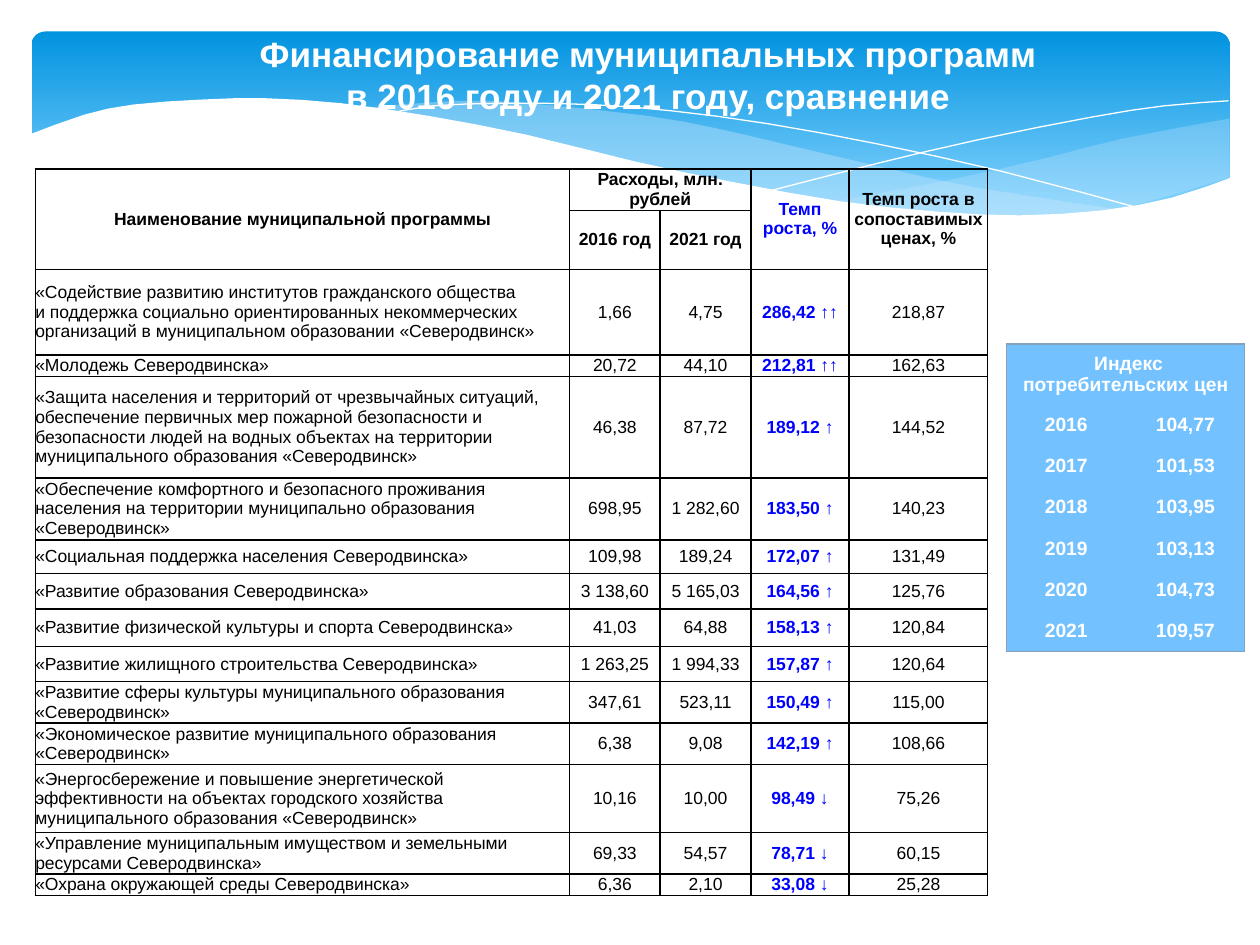
from dataclasses import dataclass

from lxml.etree import SubElement
from pptx import Presentation
from pptx.dml.color import RGBColor as Rgb
from pptx.enum.shapes import MSO_SHAPE as Preset
from pptx.enum.text import MSO_ANCHOR as Anchor, PP_ALIGN as Align
from pptx.oxml.ns import qn
from pptx.util import Inches, Pt

COLUMNS, ROWS = 100, 75
WIDTH, HEIGHT = Inches(10), Inches(7.5)
NO_STYLE = "{2D5ABB26-0587-4C30-8999-92F81FD0307C}"


@dataclass(frozen=True)
class Theme:
    font: str = "Arial"
    title_size: float = 20
    table_size: float = 10
    index_size: float = 11
    white: str = "FFFFFF"
    black: str = "000000"
    accent: str = "0000FF"
    sky: str = "0293E0"
    pale_sky: str = "83D3FE"
    wave: str = "C6E7FC"
    index_fill: str = "73C2FF"
    index_line: str = "88A1BB"


@dataclass(frozen=True)
class Box:
    """A region in grid columns and rows."""
    left: float
    top: float
    width: float
    height: float

    def place(self):
        return x(self.left), y(self.top), x(self.width), y(self.height)


THEME = Theme()

# Wave knots are grid offsets from the banner's top left corner.
RIGHT_WAVE = [
    [(95.1, 6.9), (86.6, 8.5), (80.7, 10), (72.8, 11.8), (63.6, 13.5)],
    [(63.6, 13.5), (72, 14.4), (76.7, 14.7), (81.9, 14.6), (86.4, 14.1), (95.1, 11.6)],
]
MIDDLE_WAVE = [
    [(86.8, 14.2), (75, 12.4), (68.1, 10.9), (60.4, 9.1), (54.4, 7.7),
     (48.9, 6.7), (39.5, 5.7), (33.6, 5.5), (26.1, 6.1)],
    [(26.1, 6.1), (31.7, 6.9), (37.9, 8.1), (46.6, 10.1), (54.1, 11.8), (60.9, 13.1),
     (67, 14), (77.1, 14.8), (86.8, 14.2)],
]
FALLING_LINE = [[(28.4, 6.5), (31.9, 5.9), (37.6, 5.7), (44.4, 5.8), (50.8, 6.3),
                 (58.3, 7.3), (67, 8.9), (77, 11.1), (88.2, 14.1)]]
RISING_LINE = [[(58.8, 12.6), (67, 10.5), (75.1, 8.6), (84.1, 6.8), (89.9, 5.9), (95, 5.5)]]
WHITE_WAVE = [
    [(95.2, 11.6), (90.5, 13.2), (85, 14.2), (78.4, 14.6), (71.9, 14.3), (64.3, 13.5),
     (55.4, 11.9), (47.8, 10.3), (39.3, 8.2), (31.5, 6.7), (24.6, 5.7), (18.6, 5.3),
     (13.6, 5.4), (8.1, 5.8), (4.2, 6.6), (-0.2, 8.2)],
    [(-0.2, 19.9), (95.2, 19.9)],
]

TITLE = ["Финансирование муниципальных программ", "в 2016 году и 2021 году, сравнение"]
HEADERS = [
    ["Наименование муниципальной программы", "Расходы, млн. рублей", "",
     "Темп роста, %", "Темп роста в сопоставимых ценах, %"],
    ["", "2016 год", "2021 год", "", ""],
]
PROGRAMS = [
    ["«Содействие развитию институтов гражданского общества и\u00a0поддержка социально ориентированных некоммерческих организаций в муниципальном образовании «Северодвинск»", "1,66", "4,75", "286,42 ↑↑", "218,87"],
    ["«Молодежь Северодвинска»", "20,72", "44,10", "212,81 ↑↑", "162,63"],
    ["«Защита населения и территорий от чрезвычайных ситуаций, обеспечение первичных мер пожарной безопасности и безопасности людей на водных объектах на территории муниципального образования «Северодвинск»", "46,38", "87,72", "189,12 ↑", "144,52"],
    ["«Обеспечение комфортного и безопасного проживания населения на территории муниципально образования «Северодвинск»", "698,95", "1 282,60", "183,50 ↑", "140,23"],
    ["«Социальная поддержка населения Северодвинска»", "109,98", "189,24", "172,07 ↑", "131,49"],
    ["«Развитие образования Северодвинска»", "3 138,60", "5 165,03", "164,56 ↑", "125,76"],
    ["«Развитие физической культуры и спорта Северодвинска»", "41,03", "64,88", "158,13 ↑", "120,84"],
    ["«Развитие жилищного строительства Северодвинска»", "1 263,25", "1 994,33", "157,87 ↑", "120,64"],
    ["«Развитие сферы культуры муниципального образования «Северодвинск»", "347,61", "523,11", "150,49 ↑", "115,00"],
    ["«Экономическое развитие муниципального образования «Северодвинск»", "6,38", "9,08", "142,19 ↑", "108,66"],
    ["«Энергосбережение и повышение энергетической эффективности на объектах городского хозяйства муниципального образования «Северодвинск»", "10,16", "10,00", "98,49 ↓", "75,26"],
    ["«Управление муниципальным имуществом и земельными ресурсами Северодвинска»", "69,33", "54,57", "78,71 ↓", "60,15"],
    ["«Охрана окружающей среды Северодвинска»", "6,36", "2,10", "33,08 ↓", "25,28"],
]
PRICE_INDEX = [
    ["\u00a0Индекс потребительских цен", ""],
    ["2016", "104,77"], ["2017", "101,53"], ["2018", "103,95"],
    ["2019", "103,13"], ["2020", "104,73"], ["2021", "109,57"],
]
PROGRAM_COLUMNS = [42.4, 7.2, 7.2, 7.8, 11]
PROGRAM_ROWS = [3.3, 4.7, 6.8, 1.7, 8.1, 4.9, 2.7, 2.8, 3, 2.8, 3.3, 3.3, 5.4, 3.3, 1.7]
INDEX_COLUMNS = [9.5] * 2
INDEX_ROWS = [4.8] + [3.27] * 6


def x(columns):
    return round(WIDTH * columns / COLUMNS)


def y(rows):
    return round(HEIGHT * rows / ROWS)


def apply(target, formats):
    for name, value in formats.items():
        setattr(target, name, value)


def write(paragraph, text, size, color=None, bold=False, align=Align.CENTER):
    """Add one run; without a color it keeps the default black."""
    run = paragraph.add_run()
    run.text = text
    paragraph.alignment = align
    apply(run.font, {"name": THEME.font, "size": Pt(size), "bold": bold})
    if color:
        run.font.color.rgb = Rgb.from_string(color)


def smooth(knots, steps=2):
    """Points of a Catmull-Rom curve through the knots."""
    if len(knots) == 2:
        return knots
    padded = [knots[0], *knots, knots[-1]]
    points = [knots[0]]
    for a, b, c, d in zip(padded, padded[1:], padded[2:], padded[3:]):
        for t in (step / steps for step in range(1, steps + 1)):
            points.append(tuple(
                (2 * q + (r - p) * t + (2 * p - 5 * q + 4 * r - s) * t ** 2
                 + (3 * q - p - 3 * r + s) * t ** 3) / 2
                for p, q, r, s in zip(a, b, c, d)))
    return points


def add_wave(slide, box, curves, fill=None, opacity=100):
    """A filled wave, or a white hairline when no fill is given."""
    points = [(x(box.left + across), y(box.top + down))
              for curve in curves for across, down in smooth(curve)]
    builder = slide.shapes.build_freeform(*points[0])
    builder.add_line_segments(points[1:], close=bool(fill))
    shape = builder.convert_to_shape()
    shape.shadow.inherit = False
    if fill:
        shape.fill.solid()
        shape.fill.fore_color.rgb = Rgb.from_string(fill)
        color = shape._element.spPr.find(".//" + qn("a:srgbClr"))
        SubElement(color, qn("a:alpha"), val=str(opacity * 1000))
        shape.line.fill.background()
    else:
        shape.fill.background()
        shape.line.color.rgb = Rgb.from_string(THEME.white)
        shape.line.width = 0


def add_banner(slide, box):
    panel = slide.shapes.add_shape(Preset.ROUNDED_RECTANGLE, *box.place())
    panel.adjustments[0] = 0.07
    panel.shadow.inherit = False
    panel.line.fill.background()
    panel.fill.gradient()
    panel.fill.gradient_angle = 270
    stops = [(0, THEME.sky), (0.9, THEME.pale_sky)]
    for stop, (position, color) in zip(panel.fill.gradient_stops, stops):
        stop.position = position
        stop.color.rgb = Rgb.from_string(color)
    add_wave(slide, box, RIGHT_WAVE, THEME.wave, 29)
    add_wave(slide, box, MIDDLE_WAVE, THEME.wave, 40)
    add_wave(slide, box, FALLING_LINE)
    add_wave(slide, box, RISING_LINE)
    add_wave(slide, box, WHITE_WAVE, THEME.white)


def add_title(slide, box):
    frame = slide.shapes.add_textbox(*box.place()).text_frame
    frame.word_wrap = True
    for number, line in enumerate(TITLE):
        paragraph = frame.add_paragraph() if number else frame.paragraphs[0]
        write(paragraph, line, THEME.title_size, THEME.white, True)


def add_border(cell, sides, color, width):
    for side in sides:
        line = SubElement(cell._tc.get_or_add_tcPr(), qn("a:ln" + side), w=str(Pt(width)))
        SubElement(SubElement(line, qn("a:solidFill")), qn("a:srgbClr"), val=color)


def add_grid(slide, box, columns, rows):
    """An unstyled table whose column and row sizes share out the box."""
    table = slide.shapes.add_table(len(rows), len(columns), *box.place()).table
    table._tbl.tblPr.find(qn("a:tableStyleId")).text = NO_STYLE
    apply(table, {"first_row": False, "horz_banding": False})
    for column, share in zip(table.columns, columns):
        column.width = round(x(box.width) * share / sum(columns))
    for row, share in zip(table.rows, rows):
        row.height = round(y(box.height) * share / sum(rows))
    for cell in table.iter_cells():
        apply(cell, {"margin_left": 0, "margin_right": 0, "margin_top": 0,
                     "margin_bottom": 0, "vertical_anchor": Anchor.MIDDLE})
    return table


def add_programs(slide, box):
    table = add_grid(slide, box, PROGRAM_COLUMNS, PROGRAM_ROWS)
    table.cell(0, 1).merge(table.cell(0, 2))
    for c in (0, 3, 4):
        table.cell(0, c).merge(table.cell(1, c))
    for r, texts in enumerate(HEADERS + PROGRAMS):
        for c, text in enumerate(texts):
            cell, header, growth = table.cell(r, c), r < len(HEADERS), c == 3
            # Neighbours share a line, so each cell draws only its far sides.
            add_border(cell, "L" * (c == 0) + "R" + "T" * (r == 0) + "B", THEME.black, 1)
            if text:
                write(cell.text_frame.paragraphs[0], text, THEME.table_size,
                      THEME.accent if growth else None, header or growth,
                      Align.CENTER if header or c else Align.LEFT)


def add_price_index(slide, box):
    table = add_grid(slide, box, INDEX_COLUMNS, INDEX_ROWS)
    table.cell(0, 0).merge(table.cell(0, 1))
    last = len(PRICE_INDEX) - 1
    for r, texts in enumerate(PRICE_INDEX):
        for c, text in enumerate(texts):
            cell = table.cell(r, c)
            sides = ("LR" if r == 0 else "LR"[c]) + "T" * (r == 0) + "B" * (r == last)
            add_border(cell, sides, THEME.index_line, 0.75)
            cell.fill.solid()
            cell.fill.fore_color.rgb = Rgb.from_string(THEME.index_fill)
            if text:
                write(cell.text_frame.paragraphs[0], text, THEME.index_size,
                      THEME.white, True)


def main():
    presentation = Presentation()
    apply(presentation, {"slide_width": WIDTH, "slide_height": HEIGHT})
    slide = presentation.slides.add_slide(presentation.slide_layouts[6])
    add_banner(slide, Box(2.5, 2.5, 95.1, 15.6))
    add_programs(slide, Box(2.8, 13.4, 75.6, 57.7))
    add_price_index(slide, Box(79.9, 27.3, 18.9, 24.4))
    add_title(slide, Box(4.6, 2.1, 93.7, 7.7))
    presentation.save("out.pptx")


if __name__ == "__main__":
    main()
